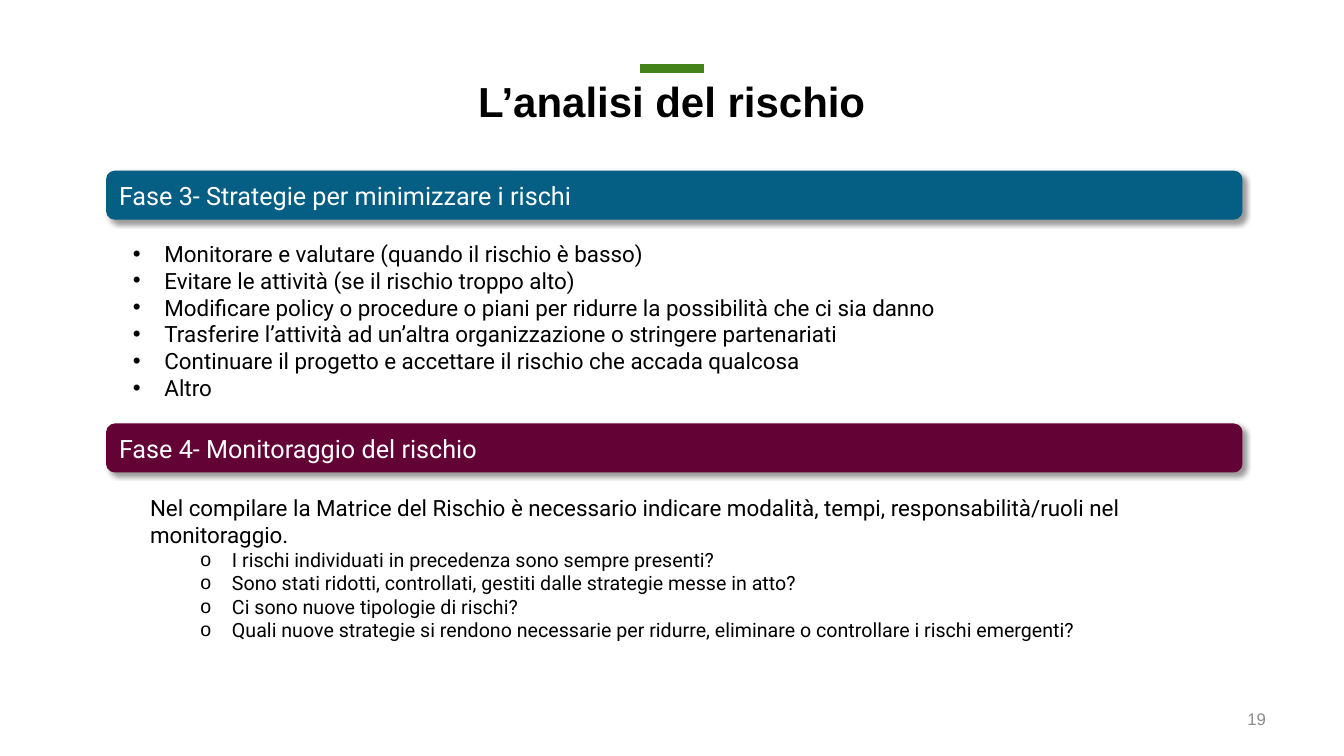
from dataclasses import dataclass

from lxml.etree import SubElement
from pptx import Presentation
from pptx.dml.color import RGBColor
from pptx.enum.shapes import MSO_CONNECTOR, MSO_SHAPE
from pptx.enum.text import MSO_ANCHOR as Anchor, MSO_AUTO_SIZE as AutoSize, PP_ALIGN as Align
from pptx.oxml.ns import qn
from pptx.util import Pt


@dataclass(frozen=True)
class Theme:
    """Colours, fonts and type sizes of the slide."""
    black: str = "000000"
    white: str = "FFFFFF"
    grey: str = "8C8C8C"
    green: str = "448319"
    blue: str = "055E83"
    wine: str = "620235"
    heading_font: str = "Arial"
    body_font: str = "Roboto"
    title_size: int = 30
    banner_size: int = 18
    body_size: int = 16
    detail_size: int = 14
    number_size: int = 12


THEME = Theme()
BANNER_LEFT, BANNER_WIDTH, BANNER_HEIGHT = 76.3, 810.7, 34
BULLET_HANG = 22.5

STRATEGIES = [
    "Monitorare e valutare (quando il rischio è basso)",
    "Evitare le attività (se il rischio troppo alto)",
    "Modificare policy o procedure o piani per ridurre la possibilità che ci sia danno",
    "Trasferire l’attività ad un’altra organizzazione o stringere partenariati",
    "Continuare il progetto e accettare il rischio che accada qualcosa",
    "Altro",
]
MONITORING = (
    "Nel compilare la Matrice del Rischio è necessario indicare modalità, tempi, "
    "responsabilità/ruoli nel monitoraggio."
)
QUESTIONS = [
    "I rischi individuati in precedenza sono sempre presenti?",
    "Sono stati ridotti, controllati, gestiti dalle strategie messe in atto?",
    "Ci sono nuove tipologie di rischi?",
    "Quali nuove strategie si rendono necessarie per ridurre, eliminare o controllare "
    "i rischi emergenti?",
]


def apply(target, **values):
    """Set each named attribute on the target."""
    for name, value in values.items():
        setattr(target, name, value)


def place(box, left, top, width, height):
    """Move and size a box, in points."""
    apply(box, left=Pt(left), top=Pt(top), width=Pt(width), height=Pt(height))


def write(para, text, size, color=THEME.black, font=THEME.body_font, bold=False, **layout):
    """Write one formatted span into a paragraph."""
    apply(para, **{"space_before": Pt(0), "alignment": Align.LEFT, **layout})
    span = para.add_run()
    span.text = text
    apply(span.font, name=font, size=Pt(size), bold=bold)
    span.font.color.rgb = RGBColor.from_string(color)


def set_bullet(para, mark=None, indent=0):
    """Give a paragraph a hanging bullet, or none."""
    props = para._p.get_or_add_pPr()
    props.set("marL", str(Pt(indent)))
    props.set("indent", str(-Pt(BULLET_HANG) if mark else 0))
    if mark:
        SubElement(props, qn("a:buFont"), typeface=THEME.heading_font)
        SubElement(props, qn("a:buChar"), char=mark)
    else:
        SubElement(props, qn("a:buNone"))


def fill_list(box, items):
    """Fill a body placeholder from (text, size, level, mark, indent) items."""
    frame = box.text_frame
    apply(frame, word_wrap=True, auto_size=AutoSize.NONE, vertical_anchor=Anchor.TOP)
    for index, (text, size, level, mark, indent) in enumerate(items):
        para = frame.add_paragraph() if index else frame.paragraphs[0]
        set_bullet(para, mark, indent)
        write(para, text, size, level=level)


def add_accent(page):
    """Draw the short green bar above the title."""
    accent = page.shapes.add_connector(MSO_CONNECTOR.STRAIGHT, Pt(457), Pt(49), Pt(503), Pt(49))
    accent.line.width = Pt(6)
    accent.line.color.rgb = RGBColor.from_string(THEME.green)
    SubElement(accent._element.spPr, qn("a:effectLst"))


def add_banner(page, top, text, color):
    """Add a rounded phase heading with a soft shadow."""
    banner = page.shapes.add_shape(
        MSO_SHAPE.ROUNDED_RECTANGLE, Pt(BANNER_LEFT), Pt(top), Pt(BANNER_WIDTH), Pt(BANNER_HEIGHT))
    banner.fill.solid()
    banner.fill.fore_color.rgb = RGBColor.from_string(color)
    banner.line.color.rgb = RGBColor.from_string(color)
    banner.line.width = Pt(1)
    banner.shadow.inherit = False
    effects = banner._element.spPr.find(qn("a:effectLst"))
    shadow = SubElement(effects, qn("a:outerShdw"), blurRad=str(Pt(4)), dist=str(Pt(3)),
                        dir="2700000", algn="tl", rotWithShape="0")
    shade = SubElement(shadow, qn("a:srgbClr"), val=THEME.black)
    SubElement(shade, qn("a:alpha"), val="40000")
    apply(banner.text_frame, word_wrap=True, vertical_anchor=Anchor.MIDDLE)
    write(banner.text_frame.paragraphs[0], text, THEME.banner_size, THEME.white)


def add_title(page, text):
    """Fill and move the title placeholder."""
    title = page.shapes.title
    place(title, 49, 54.7, 862, 45.4)
    apply(title.text_frame, word_wrap=True, auto_size=AutoSize.NONE, vertical_anchor=Anchor.TOP)
    write(title.text_frame.paragraphs[0], text, THEME.title_size, font=THEME.heading_font,
          bold=True, alignment=Align.CENTER, line_spacing=0.9)


def add_page_number(page, number):
    """Add the page number in the lower right corner."""
    box = page.shapes.add_textbox(Pt(860.4), Pt(502.6), Pt(51), Pt(22.3))
    apply(box.text_frame, word_wrap=True, vertical_anchor=Anchor.MIDDLE)
    write(box.text_frame.paragraphs[0], number, THEME.number_size, THEME.grey,
          THEME.heading_font, alignment=Align.RIGHT)


def main():
    """Build the slide and save the deck."""
    deck = Presentation()
    apply(deck, slide_width=Pt(960), slide_height=Pt(540))
    page = deck.slides.add_slide(deck.slide_layouts.get_by_name("Two Content"))
    strategies, monitoring = page.placeholders[1], page.placeholders[2]

    add_accent(page)
    add_title(page, "L’analisi del rischio")
    add_banner(page, 122.4, "Fase 3- Strategie per minimizzare i rischi", THEME.blue)
    place(strategies, 87.8, 167.8, 635, 123.8)
    fill_list(strategies, [(text, THEME.body_size, 0, "•", BULLET_HANG) for text in STRATEGIES])
    add_banner(page, 303, "Fase 4- Monitoraggio del rischio", THEME.wine)
    place(monitoring, 100, 349.2, 787.7, 116.6)
    fill_list(monitoring, [(MONITORING, THEME.body_size, 0, None, 0)] + [
        (text, THEME.detail_size, 1, "o", 36 + BULLET_HANG) for text in QUESTIONS])
    add_page_number(page, "19")
    deck.save("out.pptx")


if __name__ == "__main__":
    main()
